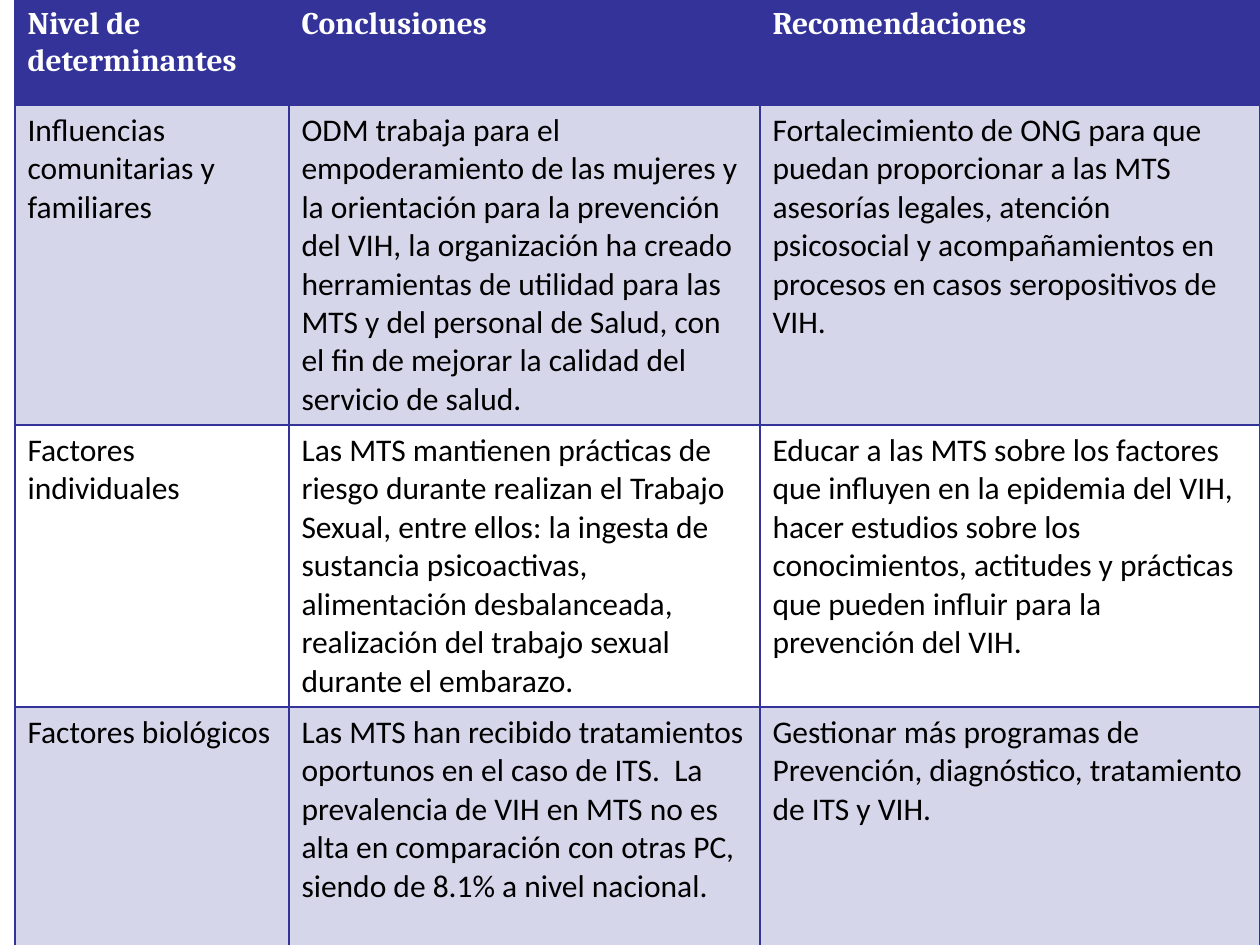
"""Build a slide with a table of conclusions and recommendations by level of determinants."""
from dataclasses import dataclass

from lxml import etree
from pptx import Presentation, util as u
from pptx.dml.color import RGBColor
from pptx.oxml import ns

HEADER = ("Nivel de determinantes", "Conclusiones", "Recomendaciones")
FINDINGS = [
    (
        "Influencias comunitarias y familiares",
        "ODM trabaja para el empoderamiento de las mujeres y la orientación para la "
        "prevención del VIH, la organización ha creado herramientas de utilidad para las "
        "MTS y del personal de Salud, con el fin de mejorar la calidad del servicio de salud.",
        "Fortalecimiento de ONG para que puedan proporcionar a las MTS asesorías legales, "
        "atención psicosocial y acompañamientos en procesos en casos seropositivos de VIH.",
    ),
    (
        "Factores individuales",
        "Las MTS mantienen prácticas de riesgo durante realizan el Trabajo Sexual, entre "
        "ellos: la ingesta de sustancia psicoactivas, alimentación desbalanceada, "
        "realización del trabajo sexual durante el embarazo.",
        "Educar a las MTS sobre los factores que influyen en la epidemia del VIH, hacer "
        "estudios sobre los conocimientos, actitudes y prácticas que pueden influir para "
        "la prevención del VIH.",
    ),
    (
        "Factores biológicos",
        "Las MTS han recibido tratamientos oportunos en el caso de ITS.  La prevalencia de "
        "VIH en MTS no es alta en comparación con otras PC, siendo de 8.1% a nivel nacional.",
        "Gestionar más programas de Prevención, diagnóstico, tratamiento de ITS y VIH.",
    ),
]

PX = u.Inches(1) // 126
SLIDE_SIZE = (1260, 945)
TABLE_LEFT = 15
COLUMN_WIDTHS = (274, 471, 500)
ROW_HEIGHTS = (105, 319, 282, 239)


@dataclass(frozen=True)
class Theme:
    accent: str = "333399"
    header_text: str = "FFFFFF"
    body_text: str = "000000"
    header_font: str = "Cambria"
    body_font: str = "Calibri"
    size: int = 18
    band_opacity: int = 20
    border: int = 1
    header_rule: int = 2


THEME = Theme()


def set_borders(cell, bottom):
    """Draw the four cell borders in the accent colour."""
    properties = cell._tc.get_or_add_tcPr()
    widths = {"lnL": THEME.border, "lnR": THEME.border, "lnT": THEME.border, "lnB": bottom}
    for index, (side, width) in enumerate(widths.items()):
        line = etree.Element(ns.qn(f"a:{side}"), w=str(u.Pt(width)))
        fill = etree.SubElement(line, ns.qn("a:solidFill"))
        etree.SubElement(fill, ns.qn("a:srgbClr"), val=THEME.accent)
        properties.insert(index, line)


def set_fill(cell, row):
    """Fill the header solidly and alternate body rows with a translucent band."""
    if row and row % 2 == 0:
        cell.fill.background()
        return
    cell.fill.solid()
    cell.fill.fore_color.rgb = RGBColor.from_string(THEME.accent)
    if row:
        color = cell._tc.tcPr.find(ns.qn("a:solidFill"))[0]
        etree.SubElement(color, ns.qn("a:alpha"), val=str(THEME.band_opacity * 1000))


def write_cell(cell, content, row):
    """Write and format one table cell."""
    is_header = row == 0
    cell.text = content
    font = cell.text_frame.paragraphs[0].font
    font.name = THEME.header_font if is_header else THEME.body_font
    font.size = u.Pt(THEME.size)
    font.bold = is_header
    font.color.rgb = RGBColor.from_string(THEME.header_text if is_header else THEME.body_text)
    set_fill(cell, row)
    set_borders(cell, THEME.header_rule if is_header else THEME.border)


def main():
    """Create and save the presentation."""
    presentation = Presentation()
    presentation.slide_width, presentation.slide_height = (side * PX for side in SLIDE_SIZE)
    slide = presentation.slides.add_slide(presentation.slide_layouts[6])
    rows = [HEADER, *FINDINGS]
    table = slide.shapes.add_table(
        len(rows), len(HEADER), TABLE_LEFT * PX, 0,
        sum(COLUMN_WIDTHS) * PX, sum(ROW_HEIGHTS) * PX,
    ).table
    table.horz_banding = False
    for column, width in zip(table.columns, COLUMN_WIDTHS):
        column.width = width * PX
    for row, height in zip(table.rows, ROW_HEIGHTS):
        row.height = height * PX
    for row, contents in enumerate(rows):
        for column, content in enumerate(contents):
            write_cell(table.cell(row, column), content, row)
    presentation.save("out.pptx")


if __name__ == "__main__":
    main()
